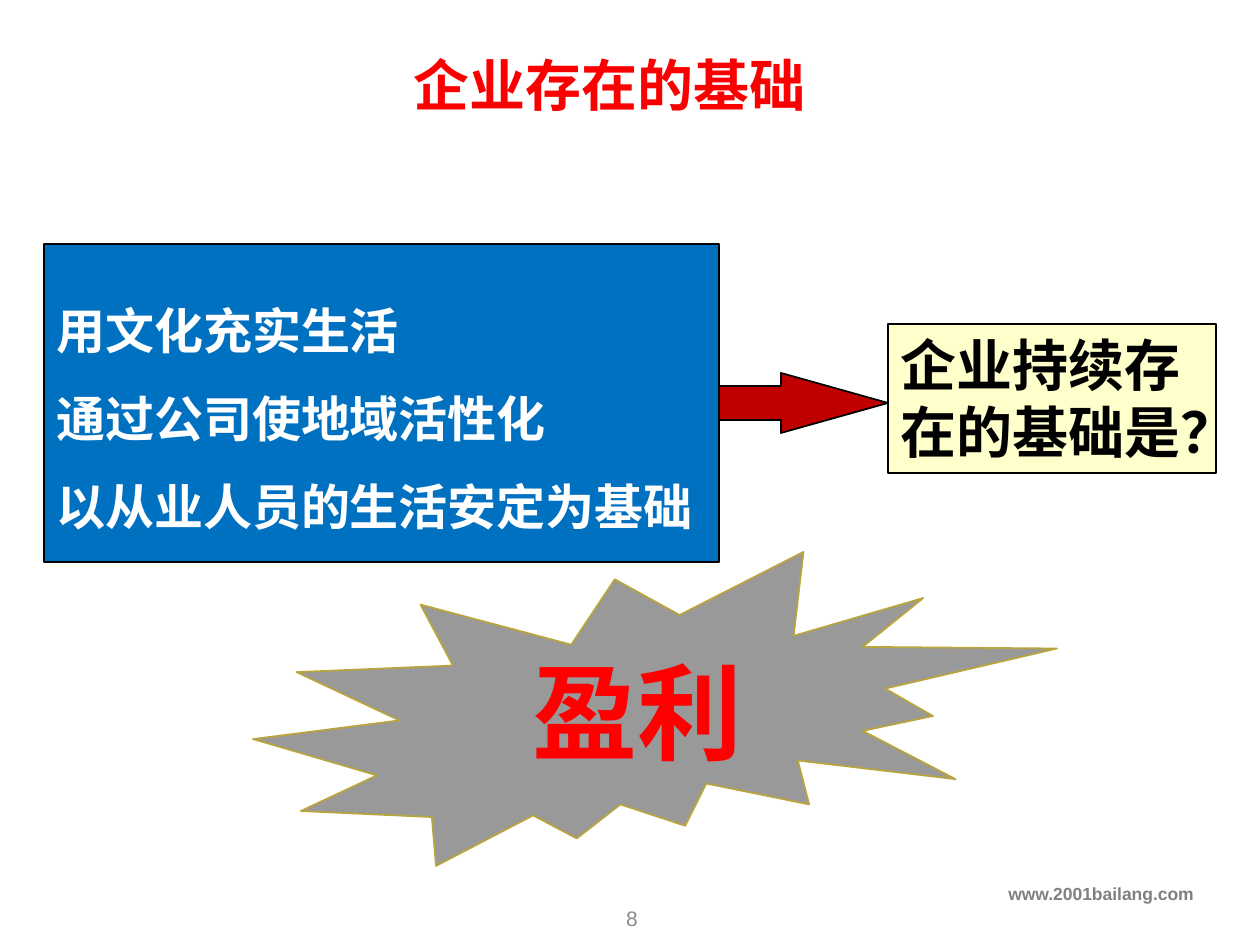
from pptx import Presentation
from pptx.dml.color import RGBColor
from pptx.enum.shapes import MSO_SHAPE as Shape
from pptx.enum.text import MSO_ANCHOR as Anchor, PP_ALIGN as Align
from pptx.oxml.ns import qn
from pptx.util import Emu, Pt

PX = 914400 // 126
SANS, CJK = "Arial", "Noto Sans CJK SC"
COLORS = {
    "title": "FA0000", "profit": "FF0000", "site": "808080", "page": "8C8C8C",
    "blue": "0070C0", "cream": "FFFFCC", "arrow": "C00000", "burst": "999999",
    "gold": "BAA53D", "black": "000000", "white": "FFFFFF",
}

# Content: lines, box in px, then text style
LABELS = [
    (["www.2001bailang.com"], (0, 877, 1206, 44),
     dict(size=10, color="site", align=Align.RIGHT)),
    (["企业存在的基础"], (401, 44, 476, 81),
     dict(size=32, color="title", font=CJK, anchor=Anchor.MIDDLE)),
    (["8"], (490, 893, 284, 50),
     dict(size=12, color="page", bold=False, align=Align.CENTER,
          anchor=Anchor.MIDDLE)),
]
PANELS = [
    (["用文化充实生活", "通过公司使地域活性化", "以从业人员的生活安定为基础"],
     (44, 244, 675, 318), "blue",
     dict(size=28, color="white", font=CJK, anchor=Anchor.MIDDLE, spacing=1.5)),
    (["企业持续存在的基础是？"], (888, 324, 328, 149), "cream",
     dict(size=32, color="black", font=CJK)),
]
ARROW = [(781, 373), (781, 386), (719, 386), (719, 420),
         (781, 420), (781, 433), (888, 403)]
BURST = (253, 552, 804, 314)
PROFIT = (["盈利"], (520, 641, 237, 140),
          dict(size=60, color="profit", wrap=False))


def rgb(name):
    return RGBColor.from_string(COLORS[name])


def scale(box):
    return [Emu(n * PX) for n in box]


def write(shape, lines, size, color, font=SANS, bold=True, align=Align.LEFT,
          anchor=Anchor.TOP, spacing=None, wrap=True):
    frame = shape.text_frame
    frame.word_wrap = wrap
    frame.vertical_anchor = anchor
    frame.text = "\n".join(lines)
    for para in frame.paragraphs:
        para.alignment = align
        para.line_spacing = spacing
        face = para.font
        face.name, face.size, face.bold = font, Pt(size), bold
        face.color.rgb = rgb(color)
        # Chinese glyphs take the East Asian font
        for run in para.runs:
            props = run._r.get_or_add_rPr()
            props.append(props.makeelement(qn("a:ea"), {"typeface": CJK}))


def paint(shape, fill, line="black"):
    shape.shadow.inherit = False
    shape.fill.solid()
    shape.fill.fore_color.rgb = rgb(fill)
    shape.line.color.rgb = rgb(line)
    shape.line.width = Pt(1)


def label(shapes, lines, box, style):
    write(shapes.add_textbox(*scale(box)), lines, **style)


def main():
    deck = Presentation()
    deck.slide_width, deck.slide_height = scale((1260, 945))
    shapes = deck.slides.add_slide(deck.slide_layouts[6]).shapes

    # Title, site and page number
    for item in LABELS:
        label(shapes, *item)

    # Text panels
    for lines, box, fill, style in PANELS:
        panel = shapes.add_shape(Shape.RECTANGLE, *scale(box))
        paint(panel, fill)
        write(panel, lines, **style)

    # Arrow between the panels
    pen = shapes.build_freeform(*ARROW[0], scale=PX)
    pen.add_line_segments(ARROW[1:], close=True)
    paint(pen.convert_to_shape(), "arrow")

    # Burst with the answer
    burst = shapes.add_shape(Shape.EXPLOSION2, *scale(BURST))
    paint(burst, "burst", "gold")
    label(shapes, *PROFIT)

    deck.save("out.pptx")


if __name__ == "__main__":
    main()
